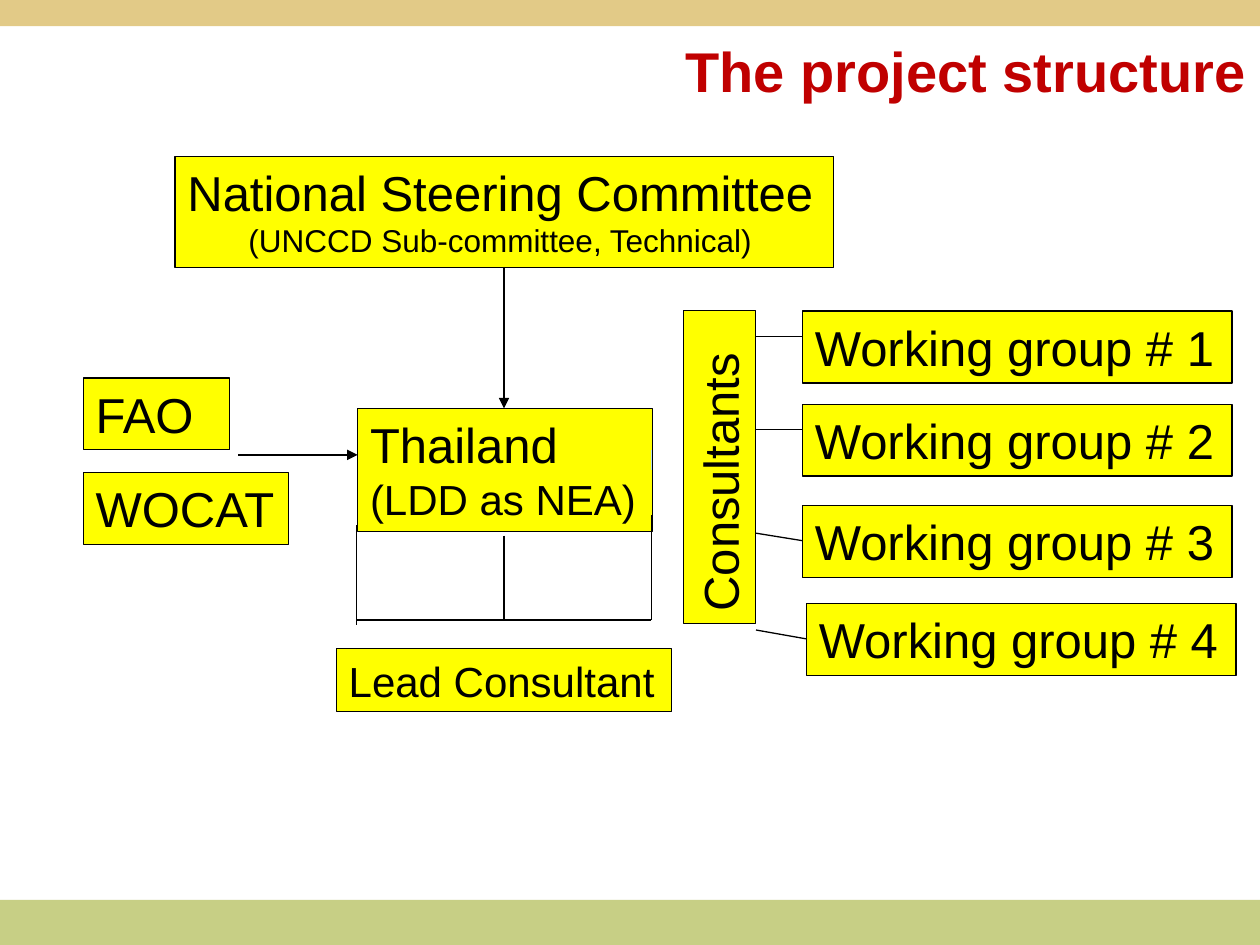
from dataclasses import dataclass

from lxml import etree
from pptx import Presentation
from pptx.dml.color import RGBColor
from pptx.enum.shapes import MSO_CONNECTOR, MSO_SHAPE
from pptx.enum.text import MSO_ANCHOR, MSO_AUTO_SIZE, PP_ALIGN
from pptx.oxml.ns import qn
from pptx.util import Cm, Pt

RECT = MSO_SHAPE.RECTANGLE
STRAIGHT = MSO_CONNECTOR.STRAIGHT
TOP, MIDDLE = MSO_ANCHOR.TOP, MSO_ANCHOR.MIDDLE
GROW, FIXED = MSO_AUTO_SIZE.SHAPE_TO_FIT_TEXT, MSO_AUTO_SIZE.NONE
LEFT, CENTER, RIGHT = PP_ALIGN.LEFT, PP_ALIGN.CENTER, PP_ALIGN.RIGHT


@dataclass(frozen=True)
class Theme:
    font: str = "Arial"
    ink: str = "000000"
    title: str = "C00000"
    box: str = "FFFF00"
    pale: str = "B6DCDF"
    top_band: str = "E2CA87"
    bottom_band: str = "C7CF85"
    title_size: int = 32
    large: int = 28
    medium: int = 24
    small: int = 18
    line: float = 0.75


THEME = Theme()
WIDTH, HEIGHT = 25.4, 19.05
ROW_HEIGHT = 1.45


def rgb(color):
    return RGBColor.from_string(color)


def write(p, text, size=THEME.large, color=THEME.ink, bold=False, align=LEFT):
    p.alignment = align
    r = p.add_run()
    r.text = text
    r.font.name = THEME.font
    r.font.size = Pt(size)
    r.font.bold = bold
    r.font.color.rgb = rgb(color)


def add_rect(s, x, y, w, h, fill):
    sp = s.shapes.add_shape(RECT, Cm(x), Cm(y), Cm(w), Cm(h))
    sp.shadow.inherit = False
    sp.fill.solid()
    sp.fill.fore_color.rgb = rgb(fill)
    sp.line.fill.background()
    return sp


def add_box(s, x, y, w, h, *lines, wrap=False, rotation=0):
    sp = add_rect(s, x, y, w, h, THEME.box)
    sp.line.color.rgb = rgb(THEME.ink)
    sp.line.width = Pt(THEME.line)
    sp.rotation = rotation
    tf = sp.text_frame
    tf.word_wrap = wrap
    tf.auto_size = GROW
    tf.vertical_anchor = TOP
    for i, (text, style) in enumerate(lines):
        p = tf.add_paragraph() if i else tf.paragraphs[0]
        write(p, text, **style)


def add_line(s, x1, y1, x2, y2, color=THEME.ink, arrow=False):
    cn = s.shapes.add_connector(STRAIGHT, Cm(x1), Cm(y1), Cm(x2), Cm(y2))
    cn.line.color.rgb = rgb(color)
    cn.line.width = Pt(THEME.line)
    if arrow:
        ln = cn.line._get_or_add_ln()
        etree.SubElement(ln, qn("a:tailEnd"), type="triangle")
    etree.SubElement(cn._element.spPr, qn("a:effectLst"))


def add_title(s, text):
    sp = s.shapes.title
    sp.left, sp.top, sp.width, sp.height = Cm(5.64), Cm(0.58), Cm(19.74), Cm(1.65)
    tf = sp.text_frame
    tf.word_wrap = True
    tf.auto_size = FIXED
    tf.vertical_anchor = MIDDLE
    write(tf.paragraphs[0], text, size=THEME.title_size, color=THEME.title,
          bold=True, align=RIGHT)


def add_organisations(s):
    add_box(s, 1.68, 7.62, 2.95, ROW_HEIGHT, ("FAO", {}), wrap=True)
    add_box(s, 1.68, 9.53, 4.14, ROW_HEIGHT, ("WOCAT", {}))
    add_box(s, 7.21, 8.23, 5.94, 2.49, ("Thailand", {}),
            ("(LDD as NEA)", {"size": THEME.medium}))
    add_box(s, 3.53, 3.15, 13.28, 2.24, ("National Steering Committee", {}),
            ("(UNCCD Sub-committee, Technical)",
             {"size": THEME.small, "align": CENTER}))
    add_box(s, 6.78, 13.08, 6.76, 1.27,
            ("Lead Consultant", {"size": THEME.medium}))
    add_line(s, 4.8, 9.17, 7.21, 9.17, arrow=True)
    add_line(s, 10.16, 5.38, 10.16, 8.23, arrow=True)
    add_line(s, 13.13, 9.47, 13.13, 9.07, color=THEME.pale)


def add_lead_bracket(s):
    left, middle, right, bottom = 7.19, 10.16, 13.13, 12.5
    add_line(s, left, 10.59, left, 12.6)
    add_line(s, middle, 10.8, middle, bottom)
    add_line(s, right, 10.39, right, bottom)
    add_line(s, left, bottom, right, bottom)


def add_working_groups(s):
    groups = [
        (16.18, 6.27, 6.78, 14.88, 6.78),
        (16.18, 8.15, 8.66, 14.88, 8.66),
        (16.18, 10.19, 10.9, 14.88, 10.69),
        (16.26, 12.17, 12.88, 15.24, 12.7),
    ]
    for number, (x, y, y_group, x_link, y_link) in enumerate(groups, 1):
        add_box(s, x, y, 8.66, ROW_HEIGHT, (f"Working group # {number}", {}))
        add_line(s, x, y_group, x_link, y_link)
    add_box(s, 11.35, 8.69, 6.32, ROW_HEIGHT, ("Consultants", {}),
            wrap=True, rotation=270)


def main():
    prs = Presentation()
    prs.slide_width, prs.slide_height = Cm(WIDTH), Cm(HEIGHT)
    s = prs.slides.add_slide(prs.slide_layouts.get_by_name("Title Only"))
    add_rect(s, 0, 18.14, WIDTH, HEIGHT - 18.14, THEME.bottom_band)
    add_rect(s, 0, 0, WIDTH, 0.53, THEME.top_band)
    add_title(s, "The project structure")
    add_organisations(s)
    add_lead_bracket(s)
    add_working_groups(s)
    prs.save("out.pptx")


if __name__ == "__main__":
    main()
